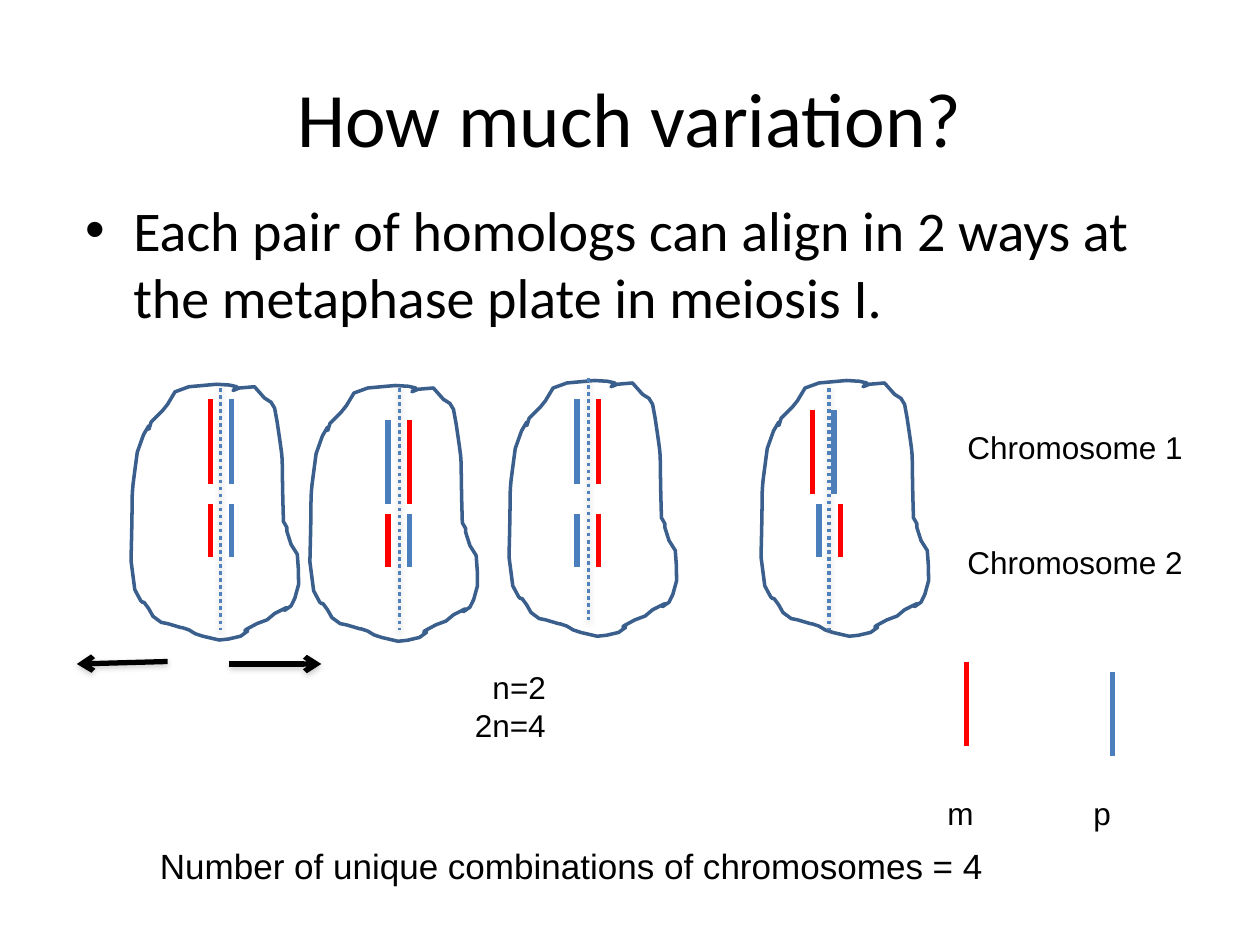
import math
import pptx
import pptx.util
import pptx.dml.color
import pptx.enum.dml
import pptx.enum.shapes
import pptx.enum.text
import pptx.oxml
import pptx.oxml.ns
from pptx.util import Inches

COLORS = {
    "text": "000000",
    "maternal": "FF0000",
    "paternal": "4B7EBC",
    "membrane": "3A5F8C",
    "plate": "4F81BD",
    "shadow": "808080",
}
MEMBRANE_START = (0.88, 0.04)
MEMBRANE_SEGMENTS = [
    (0.82, 0.03, 0.8, 0, 0.5, 0.04), (0.39, 0.08), (0.33, 0.18),
    (0.29, 0.23), (0.2, 0.32),
    (0.15, 0.48, 0.23, 0.24, 0.14, 0.42), (0.09, 0.56),
    (0.03, 1.01, 0.06, 0.73, 0.04, 1.42), (0.07, 1.65),
    (0.17, 1.85, 0.1, 1.67, 0.18, 1.8), (0.24, 1.88, 0.18, 1.85, 0.28, 1.91),
    (0.33, 1.92), (0.52, 1.98, 0.39, 1.93, 0.5, 1.97),
    (0.55, 2), (0.61, 2.02), (0.74, 2.05),
    (0.74, 2.05, 0.88, 2.04, 0.91, 2.02),
    (1.08, 1.91, 0.81, 2.04, 1.04, 1.92), (1.12, 1.89), (1.18, 1.84),
    (1.42, 1.71, 1.15, 1.89, 1.31, 1.78), (1.34, 1.72), (1.37, 1.61),
    (1.37, 1.53, 1.37, 1.45, 1.36, 1.37), (1.31, 1.29),
    (1.23, 1.07, 1.32, 1.23, 1.25, 1.11),
    (1.23, 0.47, 1.26, 0.73, 1.2, 0.32), (1.18, 0.21),
    (1.13, 0.12, 1.18, 0.2, 1.1, 0.13), (1.02, 0.04),
    (0.9, 0.05), (0.85, 0.07), (0.88, 0.04),
]
STEP_LENGTH = 0.15
PAIR_GAP = 0.17
LONG, SHORT = 0.67, 0.42


def rgb(name):
    """Return the named colour."""
    return pptx.dml.color.RGBColor.from_string(COLORS[name])


def add_text(slide, box, lines, size, font="Arial"):
    """Add a wrapping text box with one paragraph per line."""
    shape = slide.shapes.add_textbox(*(Inches(length) for length in box))
    frame = shape.text_frame
    frame.word_wrap = True
    for index, line in enumerate(lines):
        paragraph = frame.add_paragraph() if index else frame.paragraphs[0]
        run = paragraph.add_run()
        run.text = line
        run.font.size = pptx.util.Pt(size)
        run.font.name = font
        run.font.color.rgb = rgb("text")
    return frame


def add_line(slide, start, end, color, width=3, shadow=False):
    """Add a straight line, with a soft shadow if wanted."""
    connector = slide.shapes.add_connector(
        pptx.enum.shapes.MSO_CONNECTOR.STRAIGHT,
        *(Inches(length) for length in (*start, *end)))
    connector.line.color.rgb = rgb(color)
    connector.line.width = pptx.util.Pt(width)
    effect = (
        '<a:outerShdw blurRad="40000" dist="20000" dir="5400000" rotWithShape="0">'
        f'<a:srgbClr val="{COLORS["shadow"]}"><a:alpha val="38000"/></a:srgbClr>'
        '</a:outerShdw>') if shadow else ""
    namespace = pptx.oxml.ns.nsdecls("a")
    connector._element.spPr.append(
        pptx.oxml.parse_xml(f"<a:effectLst {namespace}>{effect}</a:effectLst>"))
    return connector


def add_arrow(slide, start, end):
    """Add a black line with an open arrowhead at its end."""
    arrow = add_line(slide, start, end, "text", shadow=True)
    namespace = pptx.oxml.ns.nsdecls("a")
    arrow.line._get_or_add_ln().append(
        pptx.oxml.parse_xml(f'<a:tailEnd {namespace} type="arrow"/>'))


def membrane_points():
    """Return the points along the curved cell outline."""
    points = [MEMBRANE_START]
    for segment in MEMBRANE_SEGMENTS:
        if len(segment) == 2:
            points.append(segment)
            continue
        controls = [points[-1], segment[:2], segment[2:4], segment[4:]]
        length = sum(math.dist(*ends) for ends in zip(controls, controls[1:]))
        steps = max(2, round(length / STEP_LENGTH))
        for step in range(1, steps + 1):
            t = step / steps
            weights = ((1 - t) ** 3, 3 * t * (1 - t) ** 2, 3 * t * t * (1 - t), t ** 3)
            points.append(tuple(
                sum(weight * control[axis] for weight, control in zip(weights, controls))
                for axis in (0, 1)))
    return points


def add_pair(slide, left, top, length, left_color):
    """Add two homologous chromosomes side by side."""
    right_color = "paternal" if left_color == "maternal" else "maternal"
    for x, color in ((left, left_color), (left + PAIR_GAP, right_color)):
        add_line(slide, (x, top), (x, top + length), color)


def add_cell(slide, left, top, plate, long_pair, short_pair):
    """Add a cell with its metaphase plate and two chromosome pairs."""
    points = [(Inches(left + x), Inches(top + y)) for x, y in membrane_points()]
    builder = slide.shapes.build_freeform(*points[0])
    builder.add_line_segments(points[1:], close=True)
    membrane = builder.convert_to_shape()
    membrane.shadow.inherit = False
    membrane.fill.background()
    membrane.line.color.rgb = rgb("membrane")
    membrane.line.width = pptx.util.Pt(2)
    add_pair(slide, *long_pair[:2], LONG, long_pair[2])
    add_pair(slide, *short_pair[:2], SHORT, short_pair[2])
    x, y = plate
    plate_line = add_line(slide, (x, y), (x, y + 1.92), "plate", 2, shadow=True)
    plate_line.line.dash_style = pptx.enum.dml.MSO_LINE.ROUND_DOT


def add_heading(slide, box):
    """Add the centred slide title."""
    frame = add_text(slide, box, ["How much variation?"], 44, "Calibri")
    frame.vertical_anchor = pptx.enum.text.MSO_ANCHOR.MIDDLE
    frame.paragraphs[0].alignment = pptx.enum.text.PP_ALIGN.CENTER


def add_statement(slide, box):
    """Add the bulleted statement."""
    statement = ("Each pair of homologs can align in 2 ways at "
                 "the metaphase plate in meiosis I.")
    paragraph = add_text(slide, box, [statement], 32, "Calibri").paragraphs[0]
    paragraph.space_before = pptx.util.Pt(6.4)
    properties = paragraph._p.get_or_add_pPr()
    properties.set("marL", str(Inches(0.38)))
    properties.set("indent", str(Inches(-0.38)))
    namespace = pptx.oxml.ns.nsdecls("a")
    for element in ('buFont {} typeface="Arial"', 'buChar {} char="•"'):
        properties.append(pptx.oxml.parse_xml(f"<a:{element.format(namespace)}/>"))


def add_counts(slide, box):
    """Add the haploid and diploid chromosome numbers."""
    frame = add_text(slide, box, ["n=2", "2n=4"], 18)
    frame.paragraphs[0]._p.get_or_add_pPr().set("marL", str(Inches(0.14)))


def add_legend_item(slide, left, top, width, label, color, line_top):
    """Add a sample chromosome above its label."""
    x = left + 0.25
    add_line(slide, (x, line_top), (x, line_top + LONG), color)
    add_text(slide, (left, top, width, 0.4), [label], 18)


def main():
    """Build and save the slide."""
    presentation = pptx.Presentation()
    presentation.slide_width, presentation.slide_height = Inches(10), Inches(7.5)
    slide = presentation.slides.add_slide(presentation.slide_layouts[6])
    add_heading(slide, (0.5, 0.3, 9, 1.25))
    add_statement(slide, (0.58, 1.5, 9, 5.67))
    cells = [
        (1, 3.03, (1.75, 3.08), (1.67, 3.17, "maternal"), (1.67, 4, "maternal")),
        (2.42, 3.04, (3.17, 3.08), (3.08, 3.33, "paternal"), (3.08, 4.08, "maternal")),
        (4, 3, (4.67, 3), (4.58, 3.17, "paternal"), (4.58, 4.08, "paternal")),
        (6, 3, (6.58, 3.08), (6.45, 3.25, "maternal"), (6.5, 4, "paternal")),
    ]
    for cell in cells:
        add_cell(slide, *cell)
    add_arrow(slide, (1.33, 5.25), (0.61, 5.27))
    add_arrow(slide, (1.82, 5.27), (2.55, 5.27))
    add_counts(slide, (3.67, 5.25, 0.92, 0.71))
    add_text(slide, (7.58, 3.35, 2.08, 0.4), ["Chromosome 1"], 18)
    add_text(slide, (7.58, 4.26, 2, 0.4), ["Chromosome 2"], 18)
    add_legend_item(slide, 7.42, 6.25, 0.58, "m", "maternal", 5.25)
    add_legend_item(slide, 8.58, 6.25, 0.83, "p", "paternal", 5.33)
    add_text(slide, (1.17, 6.65, 6.92, 0.44),
             ["Number of unique combinations of chromosomes = 4"], 20)
    presentation.save("out.pptx")


if __name__ == "__main__":
    main()
